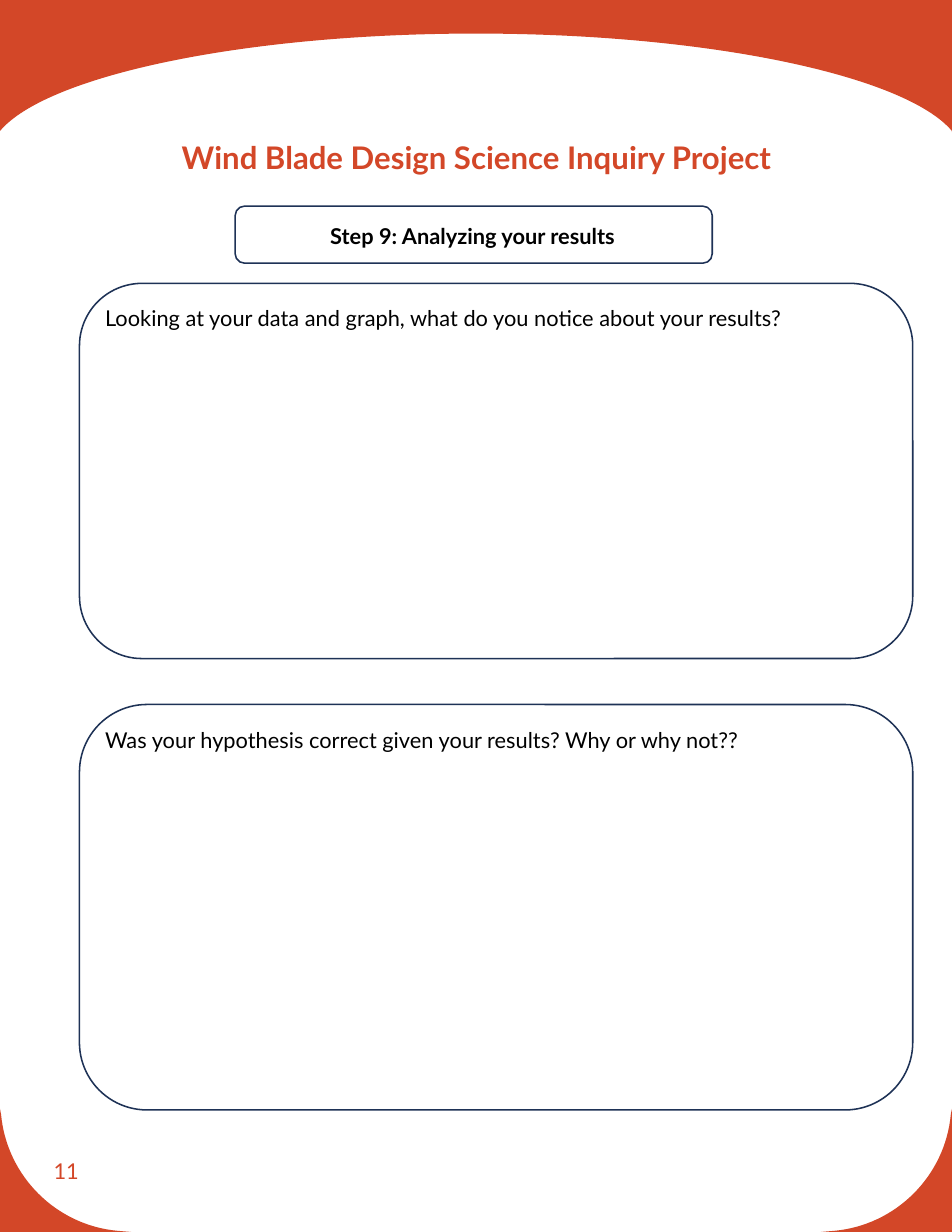
from lxml import etree
from pptx import Presentation
from pptx.dml.color import RGBColor
from pptx.enum import shapes, text
from pptx.oxml import ns
from pptx.util import Inches, Pt

ORANGE, NAVY, BLACK = "D34728", "1E3256", "000000"


def rgb(value):
    return RGBColor.from_string(value)


def add_text(parent, words, box, color, font, para, frame):
    tf = parent.add_textbox(*map(Inches, box)).text_frame
    p = tf.paragraphs[0]
    r = p.add_run()
    r.text = words
    r.font.color.rgb = rgb(color)
    formats = ((tf, {"word_wrap": True, **frame}), (p, para), (r.font, {"name": "Lato", **font}))
    for target, values in formats:
        for name, value in values.items():
            setattr(target, name, value)


prs = Presentation()
prs.slide_width, prs.slide_height = Inches(8.5), Inches(11)
s = prs.slides.add_slide(prs.slide_layouts[6])

top = [[(0, 0)], [(8.5, 0)], [(8.5, 1.18)], [(8.5, 1.17)],
       [(8.09, 0.68), (6.34, 0.3), (4.25, 0.3)],
       [(2.16, 0.3), (0.41, 0.68), (0, 1.17)], [(0, 1.18)]]
left = [[(0, 9.9)], [(0.01, 9.95)], [(0.06, 10.5), (0.5, 10.94), (1.05, 10.99)],
        [(1.17, 11)], [(0, 11)]]
right = [[(8.5 - x, y) for x, y in seg] for seg in left]

for segs in (top, left, right):
    pts = [(Inches(x), Inches(y)) for seg in segs for x, y in seg]
    fb = s.shapes.build_freeform(*pts[0])
    fb.add_line_segments(pts[1:], close=True)
    sp = fb.convert_to_shape()
    lines = iter(list(sp.element.iter(ns.qn("a:lnTo"))))
    for seg in segs[1:]:
        parts = [next(lines) for _ in seg]
        if len(parts) == 3:
            bezier = etree.Element(ns.qn("a:cubicBezTo"))
            parts[0].addprevious(bezier)
            for part in parts:
                bezier.append(part[0])
                part.getparent().remove(part)
    sp.shadow.inherit = False
    sp.fill.solid()
    sp.fill.fore_color.rgb = rgb(ORANGE)
    sp.line.fill.background()

add_text(s.shapes, "11", (0.38, 10.16, 1.91, 0.59), ORANGE, {"size": Pt(14)}, {},
         {"vertical_anchor": text.MSO_ANCHOR.MIDDLE})
add_text(s.shapes, "Wind Blade Design Science Inquiry Project", (0.36, 1.09, 7.79, 0.86), ORANGE,
         {"size": Pt(20), "bold": True},
         {"alignment": text.PP_ALIGN.CENTER, "line_spacing": 1.3}, {})

cards = [
    ((2.1, 1.84, 4.26, 0.51), "Step 9: Analyzing your results",
     (2.85, 1.94, 4.13, 0.34), True),
    ((0.71, 2.53, 7.44, 3.35),
     "Looking at your data and graph, what do you notice about your results?",
     (0.84, 2.67, 6.97, 0.34), False),
    ((0.71, 6.29, 7.44, 3.62),
     "Was your hypothesis correct given your results? Why or why not??",
     (0.84, 6.44, 6.53, 0.47), False),
]
for box, words, text_box, heading in cards:
    group = s.shapes.add_group_shape()
    sp = group.shapes.add_shape(shapes.MSO_SHAPE.ROUNDED_RECTANGLE, *map(Inches, box))
    sp.shadow.inherit = False
    sp.fill.background()
    sp.line.color.rgb = rgb(NAVY)
    sp.line.width = Pt(1)
    add_text(group.shapes, words, text_box, BLACK, {"size": Pt(14), "bold": heading}, {},
             {"word_wrap": heading, "auto_size": text.MSO_AUTO_SIZE.SHAPE_TO_FIT_TEXT})

prs.save("out.pptx")
